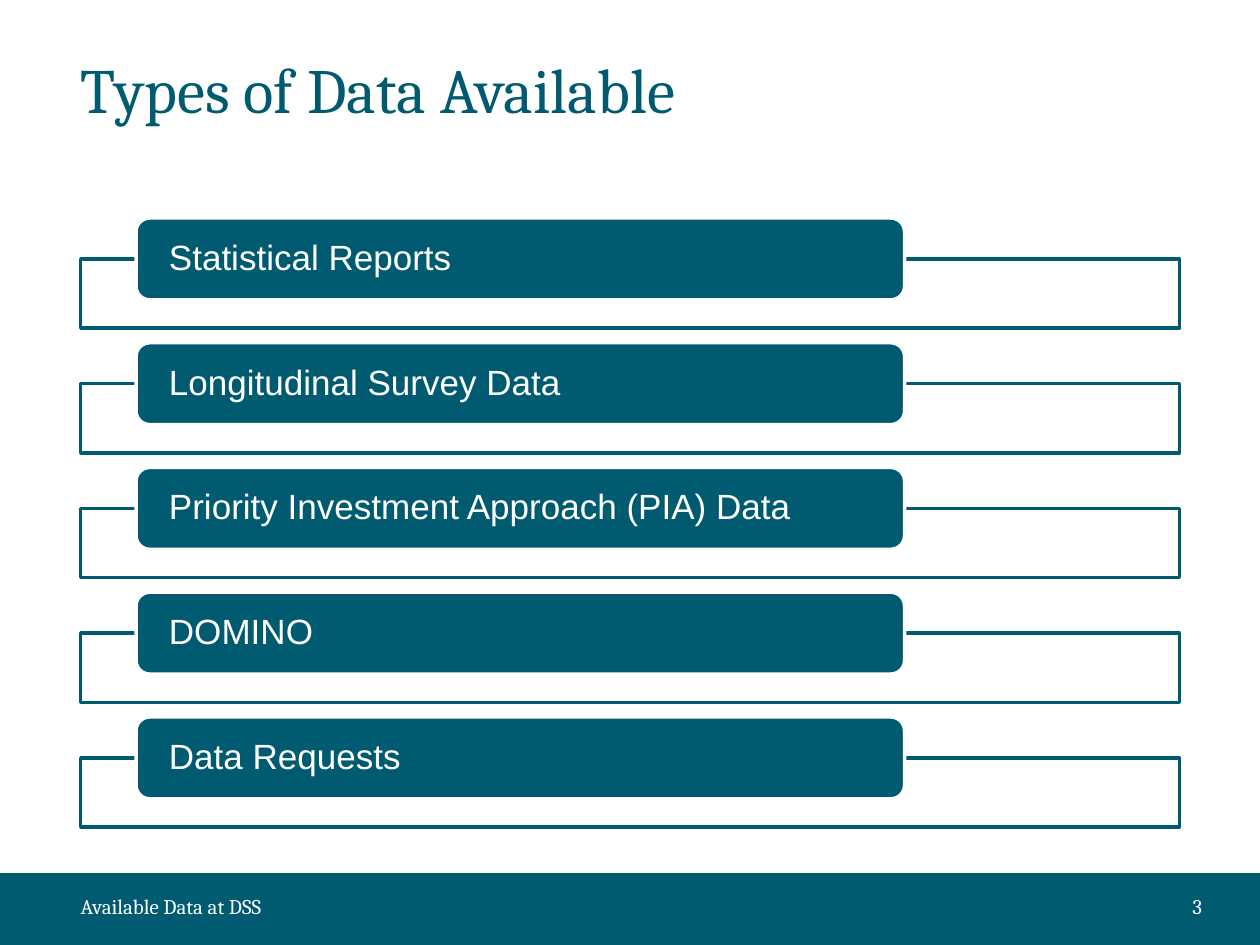
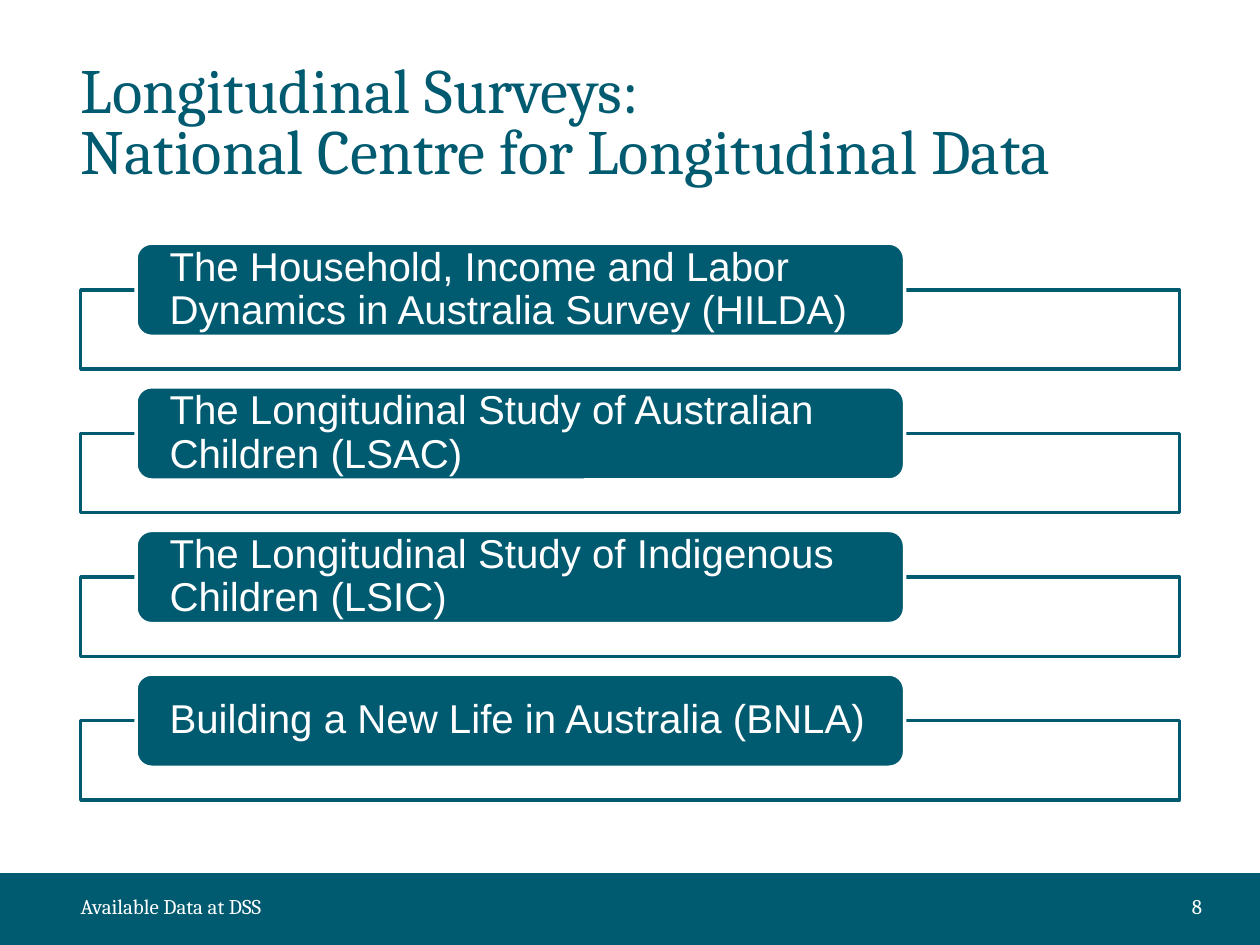
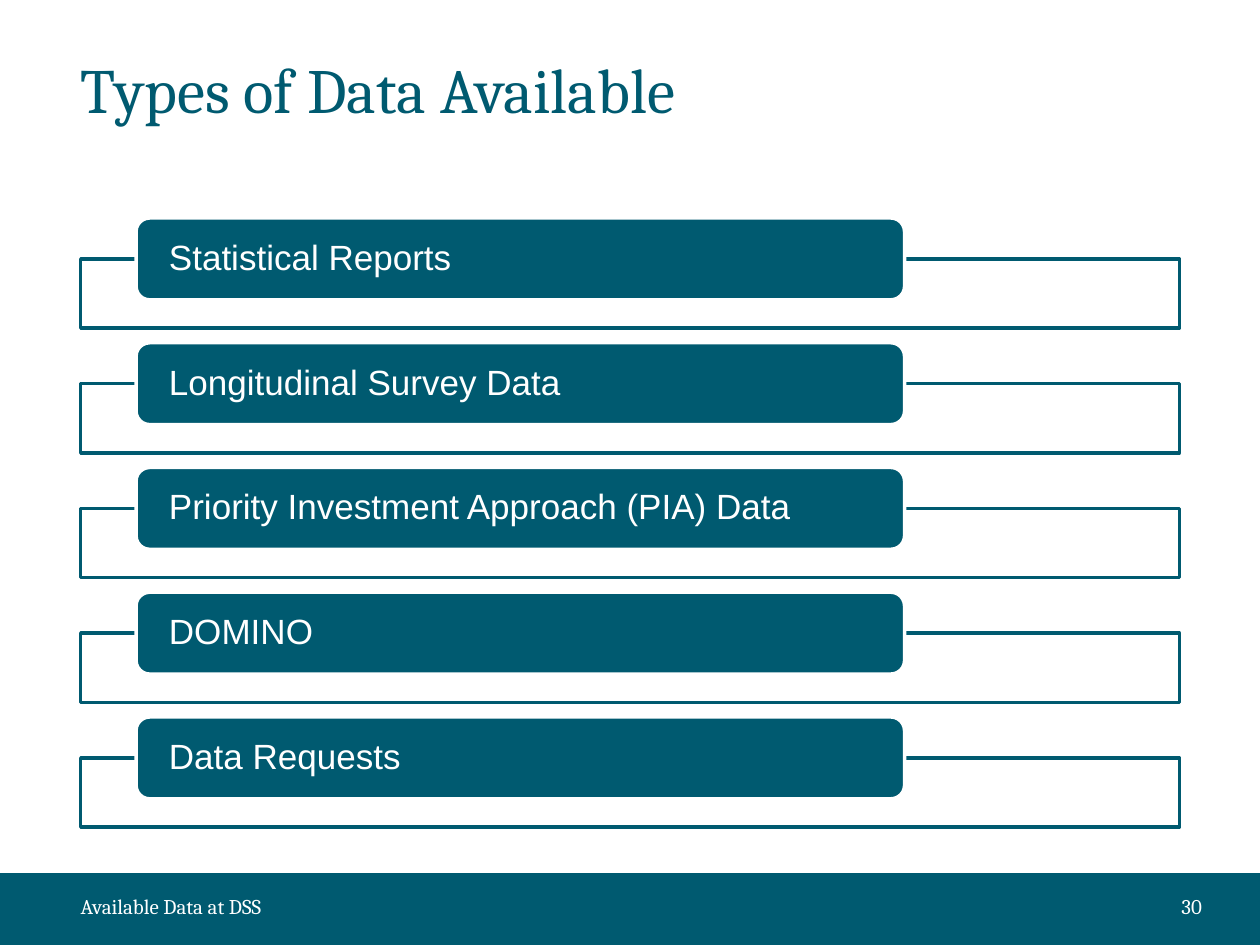
from pptx import Presentation
from pptx.dml.color import RGBColor
from pptx.enum.shapes import MSO_SHAPE
from pptx.enum.text import MSO_ANCHOR, MSO_AUTO_SIZE, PP_ALIGN
from pptx.oxml.ns import qn
from pptx.util import Inches, Pt
from lxml import etree

RECT, ROUND_RECT = MSO_SHAPE.RECTANGLE, MSO_SHAPE.ROUNDED_RECTANGLE
TOP, MIDDLE = MSO_ANCHOR.TOP, MSO_ANCHOR.MIDDLE
LEFT, RIGHT = PP_ALIGN.LEFT, PP_ALIGN.RIGHT
NO_AUTOFIT = MSO_AUTO_SIZE.NONE
TITLE_ONLY = 5

TEAL, WHITE = "005A70", "FFFFFF"
HEADING_FONT, BODY_FONT = "Cambria", "Arial"
MARGIN, CONTENT_W = 0.64, 8.72
FOOTER = "Available Data at DSS"

DATA_TYPES = [
    "Statistical Reports",
    "Longitudinal Survey Data",
    "Priority Investment Approach (PIA) Data",
    "DOMINO",
    "Data Requests",
]
SURVEYS = [
    "The Household, Income and Labor Dynamics in Australia Survey (HILDA)",
    "The Longitudinal Study of Australian Children (LSAC)",
    "The Longitudinal Study of Indigenous Children (LSIC)",
    "Building a New Life in Australia (BNLA)",
]

# Measures of the tab lists, in inches and points
FIVE_TABS = dict(top=1.73, pitch=0.99, tab_h=0.65, frame_h=0.55, size=20)
FOUR_TABS = dict(top=1.93, pitch=1.14, tab_h=0.74, frame_h=0.63, size=23)

# Slides: title, page number, labels, measures
SLIDES = [
    ("Types of Data Available", 3, DATA_TYPES, FIVE_TABS),
    ("Longitudinal Surveys: \vNational Centre for Longitudinal Data", 8,
     SURVEYS, FOUR_TABS),
    ("Types of Data Available", 30, DATA_TYPES, FIVE_TABS),
]


def rgb(value):
    return RGBColor.from_string(value)


def set_values(target, **values):
    for name, value in values.items():
        setattr(target, name, value)


class Deck:
    def __init__(self):
        self.prs = Presentation()
        set_values(self.prs, slide_width=Inches(10), slide_height=Inches(7.5))
        self.s = None

    def set_text(self, sp, text, size, color=WHITE, font=HEADING_FONT,
                 align=LEFT, anchor=MIDDLE, spacing=1.0, inset=0):
        tf = sp.text_frame
        set_values(tf, word_wrap=True, auto_size=NO_AUTOFIT, vertical_anchor=anchor,
                   margin_left=Inches(inset), margin_right=Inches(inset),
                   margin_top=0, margin_bottom=0)
        p = tf.paragraphs[0]
        p.text = text
        set_values(p, alignment=align, line_spacing=spacing)
        for r in p.runs:
            set_values(r.font, name=font, size=Pt(size))
            r.font.color.rgb = rgb(color)

    def shape(self, kind, x, y, w, h, fill, line=None, opacity=None):
        sp = self.s.shapes.add_shape(kind, Inches(x), Inches(y), Inches(w), Inches(h))
        sp.shadow.inherit = False
        sp.fill.solid()
        sp.fill.fore_color.rgb = rgb(fill)
        if opacity:
            color = sp.element.spPr.find(qn("a:solidFill")).find(qn("a:srgbClr"))
            etree.SubElement(color, qn("a:alpha"), val=str(opacity * 1000))
        if line:
            sp.line.color.rgb = rgb(line)
            sp.line.width = Pt(2)
        else:
            sp.line.fill.background()
        return sp

    def text(self, x, y, w, h, text, size, **style):
        box = self.s.shapes.add_textbox(Inches(x), Inches(y), Inches(w), Inches(h))
        self.set_text(box, text, size, **style)

    def title(self, text):
        sp = self.s.shapes.title
        set_values(sp, left=Inches(MARGIN), top=Inches(0.52),
                   width=Inches(CONTENT_W), height=Inches(1.11))
        self.set_text(sp, text, 36, color=TEAL, anchor=TOP, spacing=0.8)

    def footer(self, number):
        self.shape(RECT, 0, 6.93, 10, 0.57, TEAL)
        self.text(MARGIN, 6.99, 7.12, 0.4, FOOTER, 12)
        self.text(8.94, 6.99, 0.6, 0.4, str(number), 12, align=RIGHT)

    def slide(self, title, number):
        self.s = self.prs.slides.add_slide(self.prs.slide_layouts[TITLE_ONLY])
        self.footer(number)
        self.title(title)

    def tab_list(self, labels, top, pitch, tab_h, frame_h, size):
        """Each label tab straddles the top edge of its frame."""
        for i, label in enumerate(labels):
            y = top + i * pitch
            self.shape(RECT, MARGIN, y + tab_h / 2, CONTENT_W, frame_h,
                       WHITE, TEAL, opacity=90)
            tab = self.shape(ROUND_RECT, 1.08, y, 6.1, tab_h, TEAL, WHITE)
            self.set_text(tab, label, size, font=BODY_FONT, spacing=0.9, inset=0.23)


def main():
    deck = Deck()
    for title, number, labels, measures in SLIDES:
        deck.slide(title, number)
        deck.tab_list(labels, **measures)
    deck.prs.save("out.pptx")


if __name__ == "__main__":
    main()
